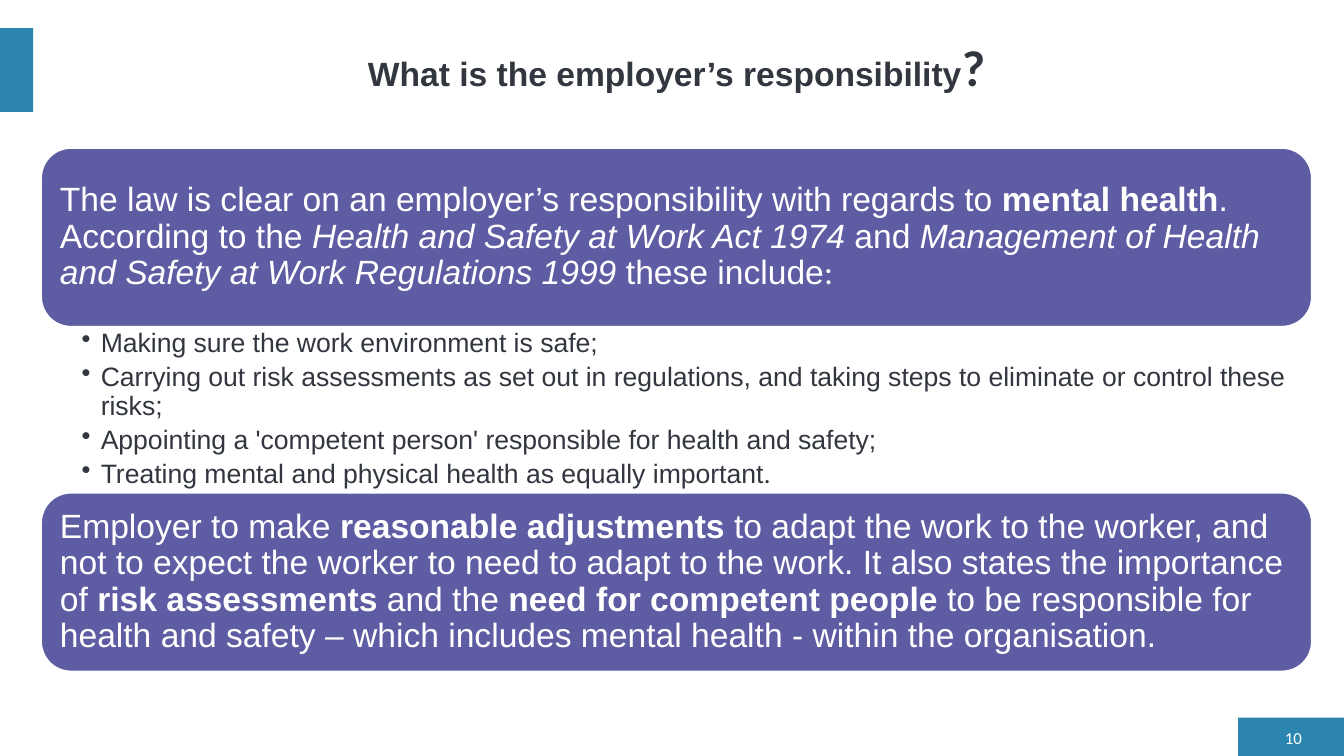
from lxml.etree import SubElement
from pptx import Presentation
from pptx.dml.color import RGBColor
from pptx.enum.shapes import MSO_SHAPE
from pptx.enum.text import MSO_ANCHOR, PP_ALIGN
from pptx.oxml.ns import qn
from pptx.util import Inches, Pt

TEAL, PURPLE, DARK, WHITE = "2C85AE", "5E5CA2", "32363F", "FFFFFF"
LEFT, WIDTH = Inches(0.41), Inches(12.6)


def paint(target, color):
    if hasattr(target, "solid"):
        target.solid()
        target = target.fore_color
    target.rgb = RGBColor.from_string(color)


def write(shape, paras, size=24, color=WHITE, align=PP_ALIGN.LEFT,
          anchor=MSO_ANCHOR.MIDDLE, pad=(0, 0, 0, 0), after=0, line=0.9,
          bullet=False):
    """Each paragraph is a list of (text, format) runs."""
    frame = shape.text_frame
    frame.word_wrap = True
    frame.vertical_anchor = anchor
    (frame.margin_left, frame.margin_top,
     frame.margin_right, frame.margin_bottom) = [Inches(p) for p in pad]
    for n, runs in enumerate(paras):
        para = frame.add_paragraph() if n else frame.paragraphs[0]
        para.alignment = align
        para.line_spacing = line
        para.space_before, para.space_after = Pt(0), Pt(after)
        if bullet:
            props = para._p.get_or_add_pPr()
            props.set("marL", str(Inches(0.19)))
            props.set("indent", str(-Inches(0.19)))
            SubElement(props, qn("a:buChar")).set("char", "•")
        for text, form in runs:
            run = para.add_run()
            run.text = text
            font = run.font
            font.name = form.get("face", "Arial")
            font.size = Pt(form.get("size", size))
            font.bold = form.get("bold", False)
            font.italic = form.get("italic", False)
            paint(font.color, color)


deck = Presentation()
deck.slide_width, deck.slide_height = Inches(13.33), Inches(7.5)
slide = deck.slides.add_slide(deck.slide_layouts[5])
shapes = slide.shapes

plain, bold, italic = {}, {"bold": True}, {"italic": True}
alt = {"face": "Calibri"}

# Teal corner marks
for x, y, w, h in [(12.28, 7.12, 1.05, 0.38), (0, 0.28, 0.33, 0.83)]:
    mark = shapes.add_shape(MSO_SHAPE.RECTANGLE, Inches(x), Inches(y),
                            Inches(w), Inches(h))
    mark.shadow.inherit = False
    paint(mark.fill, TEAL)
    mark.line.fill.background()

# Title
title = shapes.title
title.left, title.top = LEFT, Inches(0.28)
title.width, title.height = WIDTH, Inches(0.83)
write(title, [[("What is the employer’s responsibility", bold),
               ("?", {"face": "Calibri", "size": 36, "bold": True})]],
      color=DARK, align=PP_ALIGN.CENTER)

# Purple panels
law = [
    ("The law is clear on an employer’s responsibility with regards to ", plain),
    ("mental health", bold),
    (". According to the ", plain),
    ("Health and Safety at Work Act 1974", italic),
    (" and ", plain),
    ("Management of Health and Safety at Work Regulations 1999", italic),
    (" these include", plain),
    (":", alt),
]
duty = [
    ("Employer to make ", plain),
    ("reasonable adjustments", bold),
    (" to adapt the work to the worker, and not to expect the worker to need "
     "to adapt to the work. It also states the importance of ", plain),
    ("risk assessments", bold),
    (" and the ", plain),
    ("need for competent people", bold),
    (" to be responsible for health and safety – which includes mental health "
     "- within the organisation.", plain),
]
for top, runs in [(1.47, law), (4.89, duty)]:
    panel = shapes.add_shape(MSO_SHAPE.ROUNDED_RECTANGLE, LEFT, Inches(top),
                             WIDTH, Inches(1.77))
    panel.shadow.inherit = False
    paint(panel.fill, PURPLE)
    paint(panel.line.fill, WHITE)
    panel.line.width = Pt(1)
    write(panel, [runs], pad=(0.1, 0.1, 0.1, 0.1))

# Bulleted duties
duties = [
    [("Making sure the work environment is safe;", plain)],
    [("Carrying out risk assessments as set out in regulations, and taking "
      "steps to eliminate or control these risks;", plain)],
    [("Appointing a 'competent person' responsible for health and safety;",
      plain)],
    [("Treating mental and physical health as equally important", plain),
     (".", alt)],
]
items = shapes.add_textbox(LEFT, Inches(3.24), WIDTH, Inches(1.66))
write(items, duties, size=19, color=DARK, anchor=MSO_ANCHOR.TOP,
      pad=(0.4, 0.03, 0.19, 0.03), after=3.8, bullet=True)

# Page number
page = shapes.add_textbox(Inches(12.6), Inches(7.2), Inches(0.41), Inches(0.23))
write(page, [[("10", alt)]], size=12, align=PP_ALIGN.RIGHT, line=1,
      pad=(0, 0, 0.1, 0))

deck.save("out.pptx")
